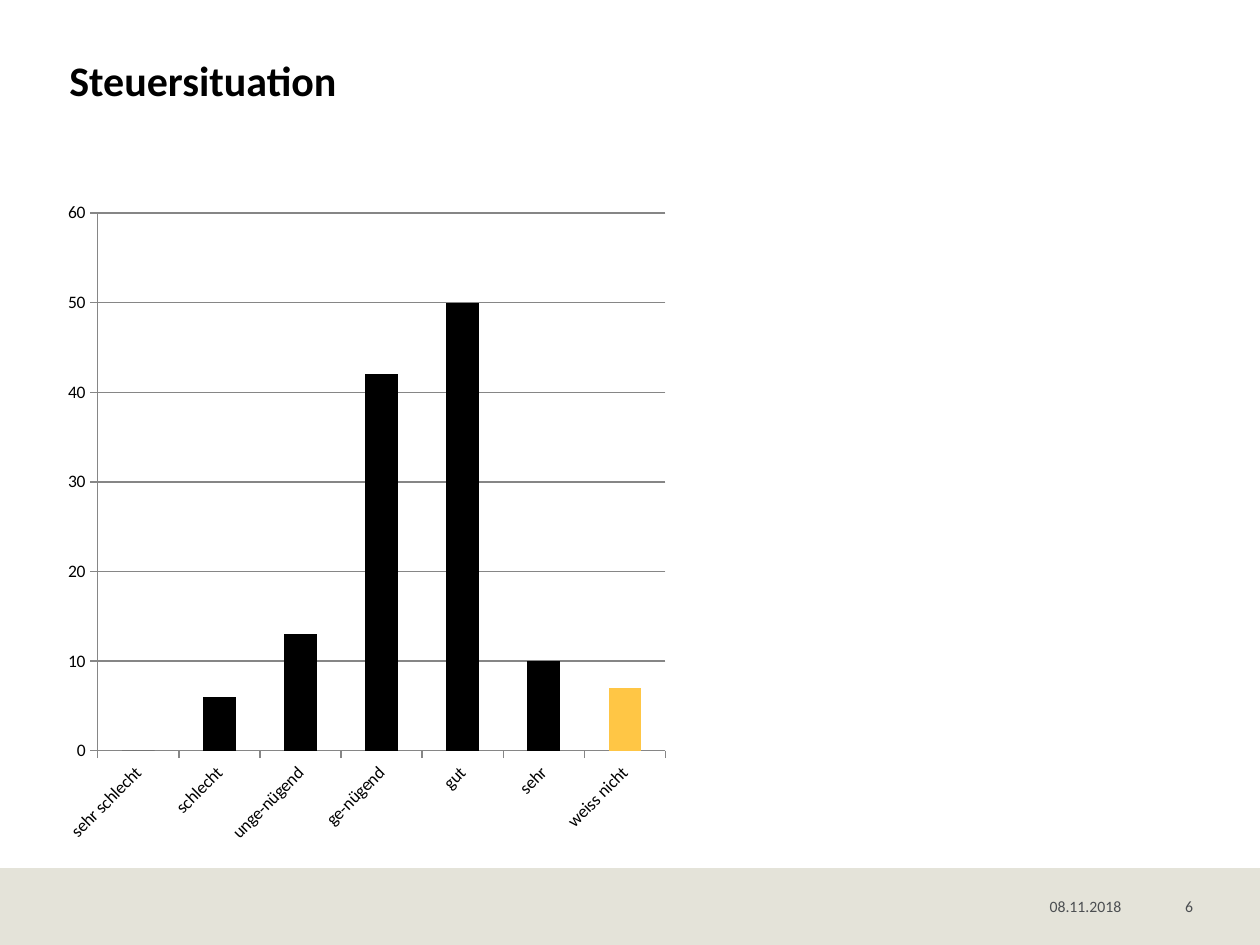
"""Build the tax situation slide with its column chart."""
import lxml.etree
import pptx
import pptx.chart.data
import pptx.dml.color
import pptx.enum.chart
import pptx.enum.shapes
import pptx.enum.text
import pptx.oxml.ns
import pptx.util

Inches = pptx.util.Inches
FONT = "Calibri"
BLACK, GRAY, AXIS_GRAY = "000000", "4C4F52", "868686"
BAND, ACCENT = "E4E3D9", "FFC645"
RATINGS = {
    "sehr schlecht": 0,
    "schlecht": 6,
    "unge-nügend": 13,
    "ge-nügend": 42,
    "gut": 50,
    "sehr": 10,
    "weiss nicht": 7,
}


def color(value):
    return pptx.dml.color.RGBColor.from_string(value)


def paint(fill, value):
    fill.solid()
    fill.fore_color.rgb = color(value)


def set_font(font, size, value, bold=False):
    font.name = FONT
    font.size = pptx.util.Pt(size)
    font.bold = bold
    font.color.rgb = color(value)


def add_text(slide, text, left, top, width, height, *, size=9, value=GRAY,
             bold=False, align="LEFT", anchor="BOTTOM"):
    box = slide.shapes.add_textbox(
        Inches(left), Inches(top), Inches(width), Inches(height))
    frame = box.text_frame
    frame.word_wrap = True
    frame.margin_left = frame.margin_right = 0
    frame.margin_top = frame.margin_bottom = 0
    frame.vertical_anchor = pptx.enum.text.MSO_ANCHOR[anchor]
    para = frame.paragraphs[0]
    para.alignment = pptx.enum.text.PP_ALIGN[align]
    span = para.add_run()
    span.text = text
    set_font(span.font, size, value, bold)


def add_footer_band(slide):
    band = slide.shapes.add_shape(
        pptx.enum.shapes.MSO_SHAPE.RECTANGLE,
        Inches(0), Inches(6.89), Inches(10), Inches(0.61))
    band.shadow.inherit = False
    paint(band.fill, BAND)
    band.line.fill.background()


def style_line(line):
    line.color.rgb = color(AXIS_GRAY)
    line.width = pptx.util.Pt(0.75)


def place_plot(chart, **fractions):
    """Fix the inner plot area as fractions of the chart frame."""
    plot_area = chart.plots[0]._element.getparent()
    for old in plot_area.findall(pptx.oxml.ns.qn("c:layout")):
        plot_area.remove(old)
    layout = lxml.etree.Element(pptx.oxml.ns.qn("c:layout"))
    manual = lxml.etree.SubElement(layout, pptx.oxml.ns.qn("c:manualLayout"))
    settings = {"layoutTarget": "inner", "xMode": "edge", "yMode": "edge", **fractions}
    for name, setting in settings.items():
        item = lxml.etree.SubElement(manual, pptx.oxml.ns.qn("c:" + name))
        item.set("val", str(setting))
    plot_area.insert(0, layout)


def add_ratings_chart(slide):
    data = pptx.chart.data.CategoryChartData()
    data.categories = list(RATINGS)
    data.add_series("Series 1", list(RATINGS.values()))
    chart = slide.shapes.add_chart(
        pptx.enum.chart.XL_CHART_TYPE.COLUMN_CLUSTERED,
        Inches(0.43), Inches(1.48), Inches(4.95), Inches(5.27), data).chart
    chart.has_title = False
    chart.has_legend = False
    set_font(chart.font, 10, BLACK)
    plot = chart.plots[0]
    plot.gap_width = 150
    plot.vary_by_categories = False
    series = plot.series[0]
    series.invert_if_negative = False
    paint(series.format.fill, BLACK)
    paint(series.points[len(RATINGS) - 1].format.fill, ACCENT)
    for axis in (chart.category_axis, chart.value_axis):
        axis.major_tick_mark = pptx.enum.chart.XL_TICK_MARK.OUTSIDE
        axis.minor_tick_mark = pptx.enum.chart.XL_TICK_MARK.NONE
        style_line(axis.format.line)
        set_font(axis.tick_labels.font, 10, BLACK)
    body = chart.category_axis._element.find(
        pptx.oxml.ns.qn("c:txPr")).find(pptx.oxml.ns.qn("a:bodyPr"))
    body.set("rot", "-2700000")
    body.set("vert", "horz")
    values = chart.value_axis
    values.minimum_scale, values.maximum_scale, values.major_unit = 0, 60, 10
    values.has_major_gridlines = True
    style_line(values.major_gridlines.format.line)
    place_plot(chart, x=0.07, y=0.04, w=0.91, h=0.81)


def main():
    deck = pptx.Presentation()
    deck.slide_width, deck.slide_height = Inches(10), Inches(7.5)
    page = deck.slides.add_slide(deck.slide_layouts[6])
    add_footer_band(page)
    add_text(page, "08.11.2018", 8.33, 6.93, 0.71, 0.34)
    add_text(page, "6", 9.04, 6.93, 0.43, 0.34, align="RIGHT")
    add_text(page, "Steuersituation", 0.55, 0.43, 8.91, 0.4,
             size=24, value=BLACK, bold=True, anchor="TOP")
    add_ratings_chart(page)
    deck.save("out.pptx")


if __name__ == "__main__":
    main()
